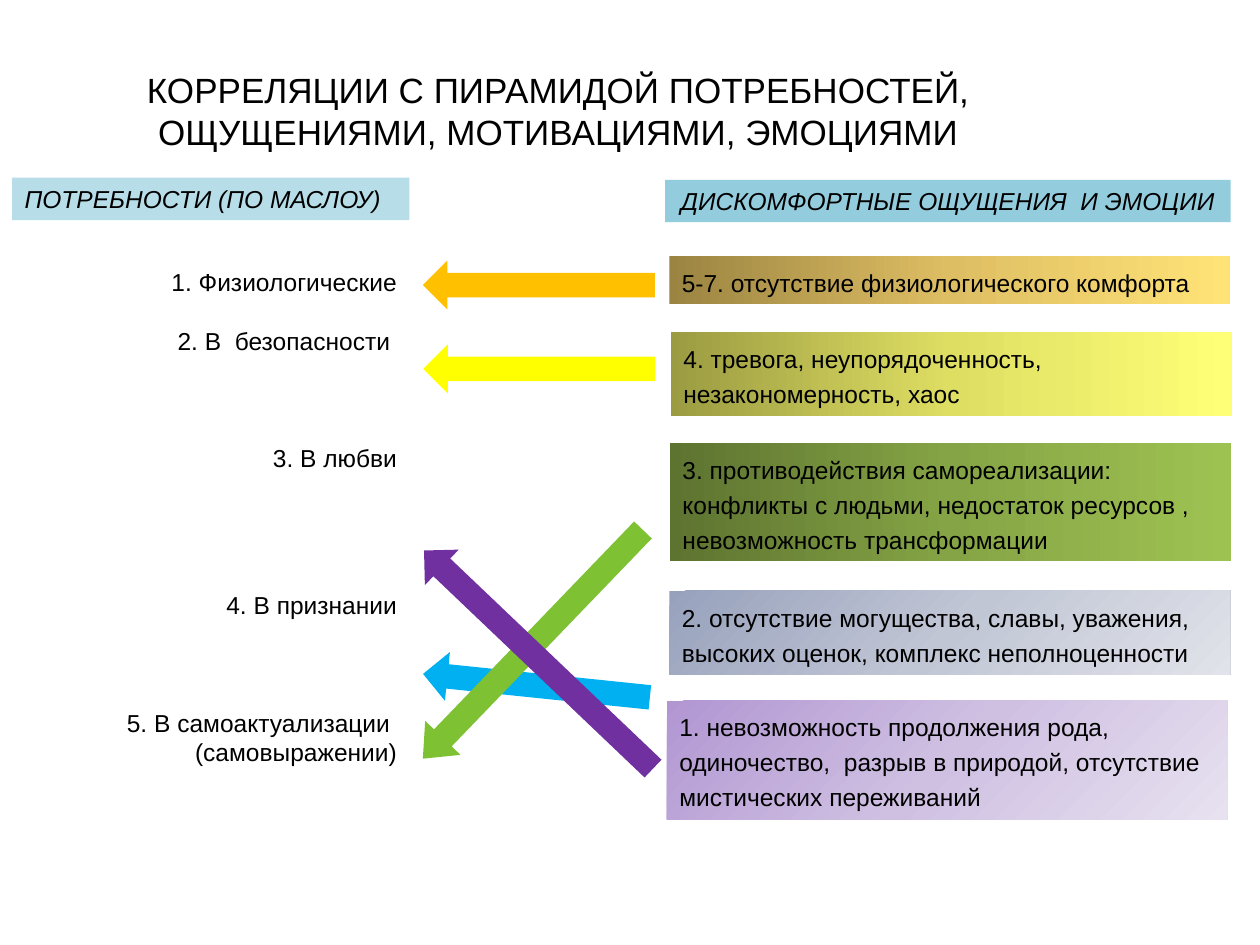
from copy import deepcopy
from typing import NamedTuple

from pptx import Presentation
from pptx.dml.color import RGBColor
from pptx.enum.shapes import MSO_SHAPE as Preset
from pptx.enum.text import MSO_ANCHOR as Anchor, PP_ALIGN as Align
from pptx.oxml.ns import qn
from pptx.util import Pt

COLORS = {
    "text": "000000",
    "needs": "B7DEE8",
    "feelings": "93CDDD",
    "orange": "FFC000",
    "yellow": "FFFF00",
    "green": "7EC234",
    "blue": "00B0F0",
    "purple": "7030A0",
}
GRADIENTS = {
    "gold": ("9B8442", "DEBE63", "FFE377"),
    "yellow": ("9B9B42", "DEDE63", "FFFF77"),
    "green": ("5D7330", "85A445", "9EC252"),
    "slate": ("97A1BC", "C1C6D5", "E1E3EA"),
    "lilac": ("B196D2", "CFC0E2", "E7E1F0"),
}
FONT = "Arial"
NEED_LINE = 16.8
FEELING_WIDTH = 320.4
ARROW_HEIGHT = 28


class Box(NamedTuple):
    left: float
    top: float
    width: float
    height: float


class Header(NamedTuple):
    text: str
    box: Box
    color: str
    align: Align


class Need(NamedTuple):
    text: str
    lines_before: int


class Feeling(NamedTuple):
    text: str
    left: float
    top: float
    height: float
    gradient: str
    angle: float


class Arrow(NamedTuple):
    left: float
    top: float
    width: float
    color: str
    rotation: float = 0
    head: float = 0.5


TITLE = "КОРРЕЛЯЦИИ С ПИРАМИДОЙ ПОТРЕБНОСТЕЙ, ОЩУЩЕНИЯМИ, МОТИВАЦИЯМИ, ЭМОЦИЯМИ"
HEADERS = [
    Header("ПОТРЕБНОСТИ (ПО МАСЛОУ)", Box(7, 101.6, 227, 24.2), "needs", Align.LEFT),
    Header("ДИСКОМФОРТНЫЕ ОЩУЩЕНИЯ  И ЭМОЦИИ", Box(380, 102.8, 323.3, 24.2),
           "feelings", Align.CENTER),
]
NEEDS = [
    Need("1. Физиологические", 0),
    Need("2. В  безопасности ", 1),
    Need("3. В любви", 3),
    Need("4. В признании", 4),
    Need("5. В самоактуализации ", 3),
    Need("(самовыражении)", 0),
]
FEELINGS = [
    Feeling("5-7. отсутствие физиологического комфорта", 382.5, 146.3, 27.4, "gold", 0),
    Feeling("4. тревога, неупорядоченность, незакономерность, хаос",
            383.4, 189.8, 47.8, "yellow", 0),
    Feeling("3. противодействия самореализации: конфликты с людьми, недостаток ресурсов ,  "
            "невозможность трансформации", 382.9, 253, 67.6, "green", 0),
    Feeling("2. отсутствие могущества, славы, уважения, высоких оценок, "
            "комплекс неполноценности", 382.5, 337.7, 47.8, "slate", 45),
    Feeling("1. невозможность продолжения рода, одиночество,  разрыв в природой, "
            "отсутствие мистических переживаний", 381.1, 400.3, 67.9, "lilac", 45),
]
ARROWS = [
    Arrow(241.7, 148.9, 132.5, "orange"),
    Arrow(241.4, 377.8, 130.3, "blue", 5.9),
    Arrow(213.8, 354.2, 181.4, "green", 313.9, 0.59),
    Arrow(241.9, 196.8, 132.5, "yellow"),
    Arrow(217.4, 362.9, 180.7, "purple", 43.6),
]


def rgb(value: str) -> RGBColor:
    return RGBColor.from_string(value)


def points(*values: float) -> list[Pt]:
    return [Pt(value) for value in values]


def style(paragraph, text: str, size: float, align: Align = Align.LEFT,
          line: float | None = None, italic: bool = False) -> None:
    paragraph.text = text
    paragraph.alignment = align
    if line:
        paragraph.line_spacing = Pt(line)
    font = paragraph.font
    font.name = FONT
    font.size = Pt(size)
    font.italic = italic
    font.color.rgb = rgb(COLORS["text"])


def add_text_box(slide, box: Box):
    frame = slide.shapes.add_textbox(*points(*box)).text_frame
    frame.word_wrap = True
    return frame


def add_plain_shape(slide, preset: Preset, box: Box):
    shape = slide.shapes.add_shape(preset, *points(*box))
    shape.shadow.inherit = False
    shape.line.fill.background()
    shape.text_frame.word_wrap = True
    shape.text_frame.vertical_anchor = Anchor.TOP
    return shape


def fill_gradient(shape, colors: tuple[str, ...], angle: float) -> None:
    fill = shape.fill
    fill.gradient()
    stop_list = shape._element.spPr.find(qn("a:gradFill")).find(qn("a:gsLst"))
    stop_list.append(deepcopy(stop_list[0]))
    for index, (stop, color) in enumerate(zip(fill.gradient_stops, colors)):
        stop.position = index / (len(colors) - 1)
        stop.color.rgb = rgb(color)
    fill.gradient_angle = -angle % 360


def add_needs(slide, needs: list[Need]) -> None:
    frame = add_text_box(slide, Box(8.6, 149, 225.4, 331.2))
    for index, need in enumerate(needs):
        paragraph = frame.add_paragraph() if index else frame.paragraphs[0]
        style(paragraph, need.text, 14, Align.RIGHT, NEED_LINE)
        paragraph.space_before = Pt(need.lines_before * NEED_LINE)


def add_feeling(slide, feeling: Feeling) -> None:
    box = Box(feeling.left, feeling.top, FEELING_WIDTH, feeling.height)
    shape = add_plain_shape(slide, Preset.RECTANGLE, box)
    fill_gradient(shape, GRADIENTS[feeling.gradient], feeling.angle)
    style(shape.text_frame.paragraphs[0], feeling.text, 14, line=20)


def add_arrow(slide, arrow: Arrow) -> None:
    box = Box(arrow.left, arrow.top, arrow.width, ARROW_HEIGHT)
    shape = add_plain_shape(slide, Preset.LEFT_ARROW, box)
    shape.fill.solid()
    shape.fill.fore_color.rgb = rgb(COLORS[arrow.color])
    shape.adjustments[1] = arrow.head
    shape.rotation = arrow.rotation


def add_header(slide, header: Header) -> None:
    shape = add_plain_shape(slide, Preset.RECTANGLE, header.box)
    shape.fill.solid()
    shape.fill.fore_color.rgb = rgb(COLORS[header.color])
    style(shape.text_frame.paragraphs[0], header.text, 14, header.align, italic=True)


def main() -> None:
    presentation = Presentation()
    presentation.slide_width, presentation.slide_height = points(720, 540)
    slide = presentation.slides.add_slide(presentation.slide_layouts[6])
    title = add_text_box(slide, Box(5.8, 43.2, 626.4, 39.6))
    title.vertical_anchor = Anchor.MIDDLE
    style(title.paragraphs[0], TITLE, 20, Align.CENTER, 24)
    add_needs(slide, NEEDS)
    for feeling in FEELINGS:
        add_feeling(slide, feeling)
    for arrow in ARROWS:
        add_arrow(slide, arrow)
    for header in HEADERS:
        add_header(slide, header)
    presentation.save("out.pptx")


if __name__ == "__main__":
    main()
